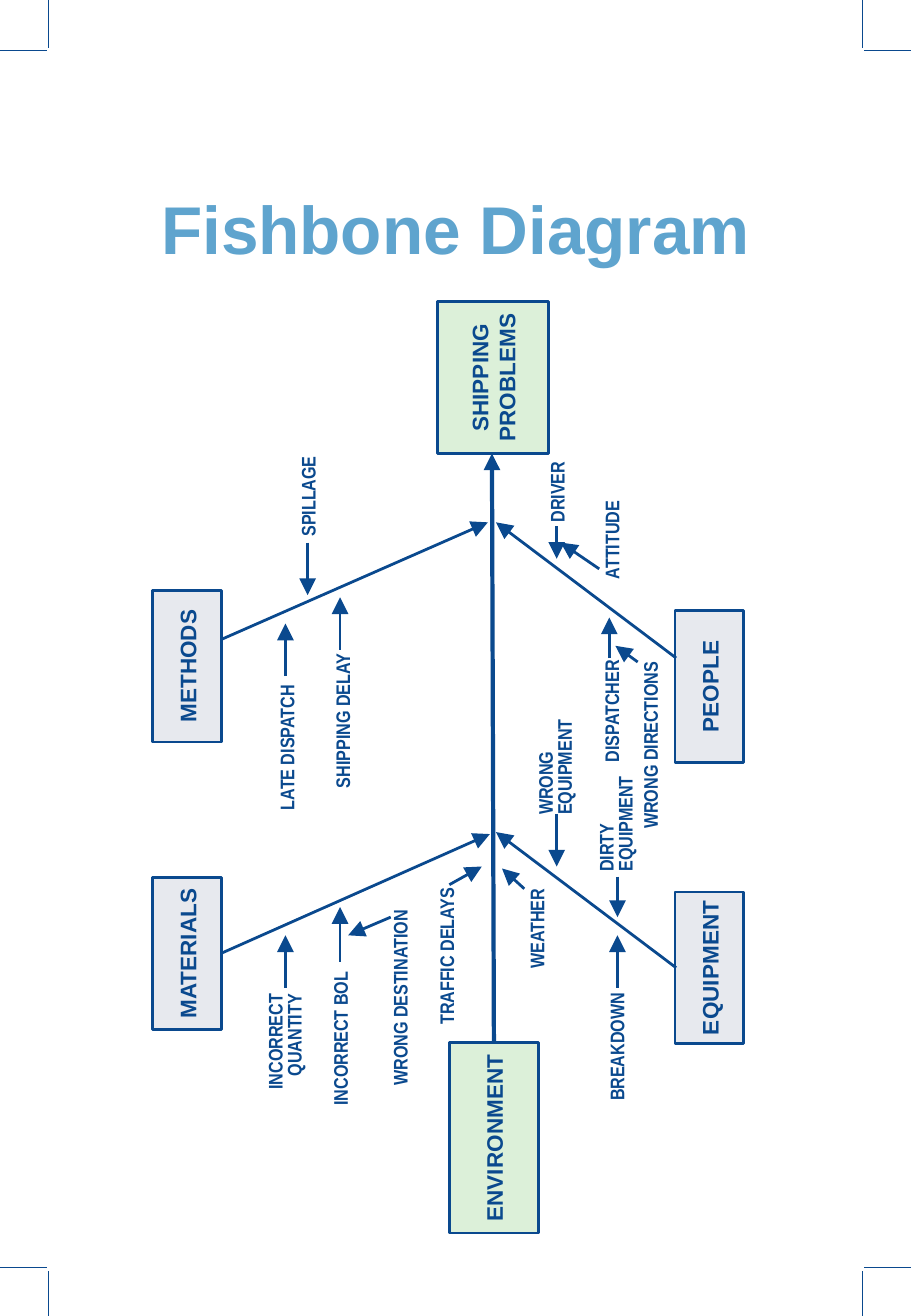
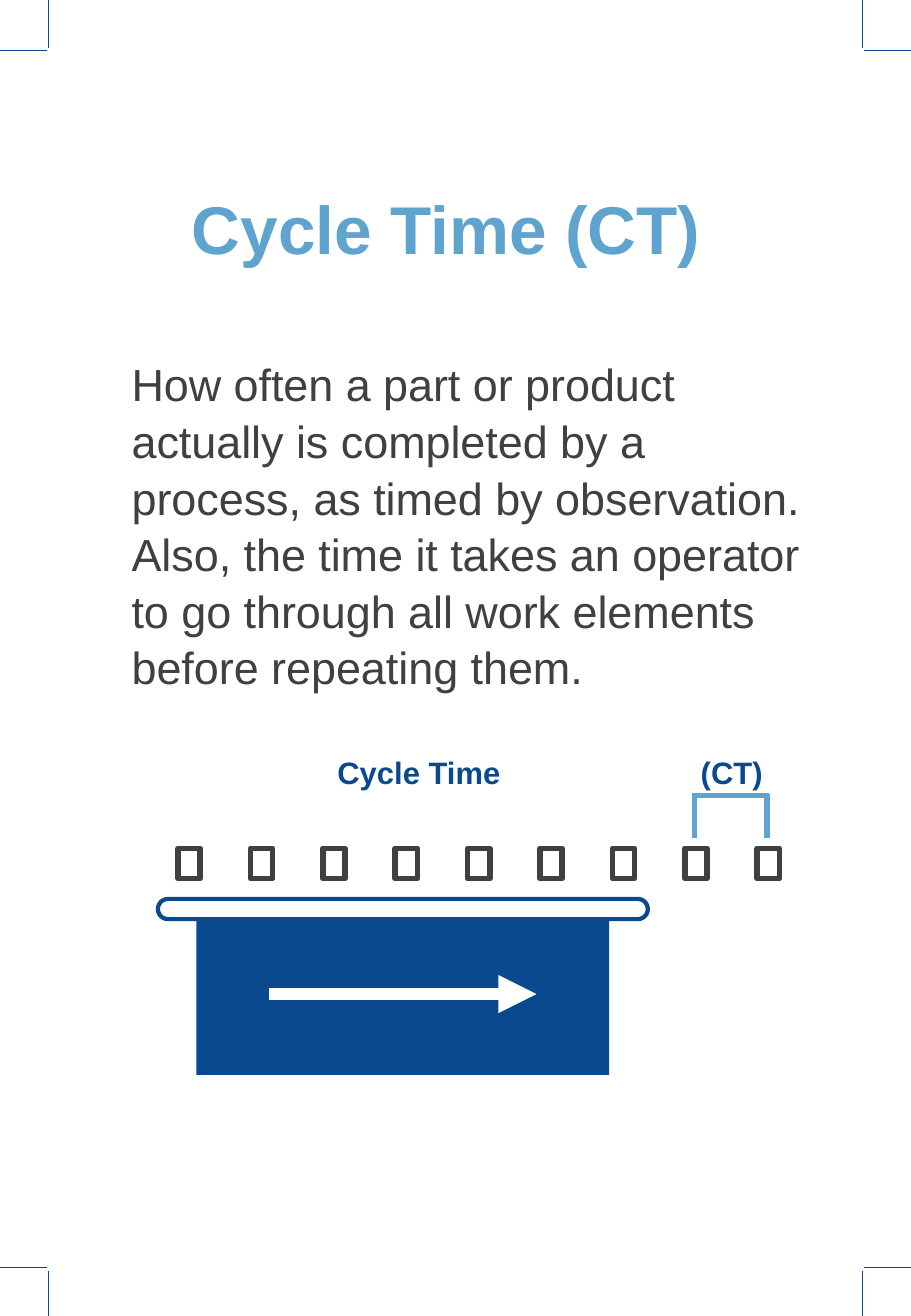
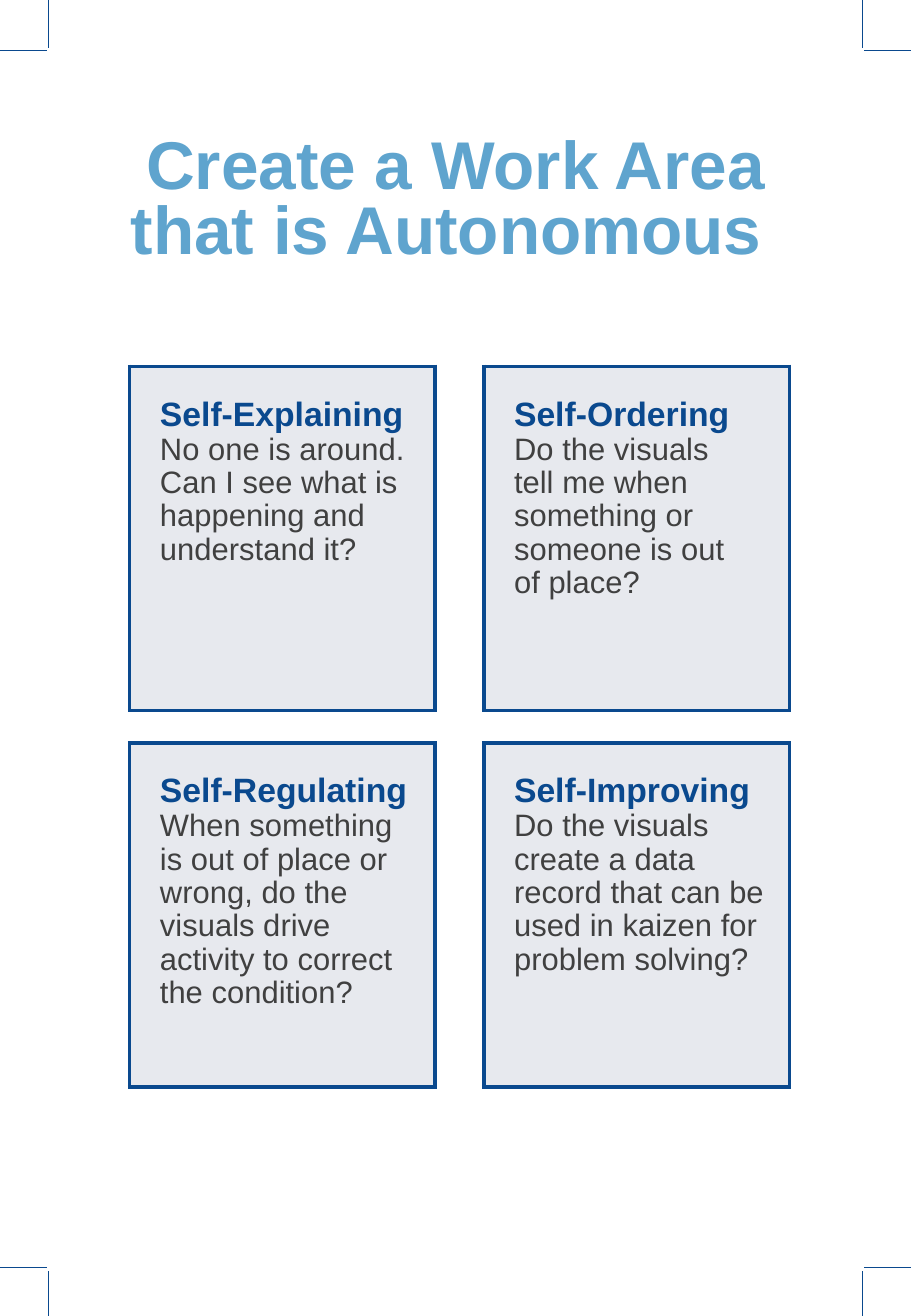
from copy import deepcopy
from dataclasses import dataclass

from lxml import etree
from pptx import Presentation
from pptx import util as u
from pptx.dml.color import RGBColor
from pptx.enum import shapes, text
from pptx.oxml import ns

COLS, ROWS = 45, 65
CELL = u.Inches(0.1)
LEFT, MID, RIGHT = text.PP_ALIGN.LEFT, text.PP_ALIGN.CENTER, text.PP_ALIGN.RIGHT
RECT, PILL = shapes.MSO_SHAPE.RECTANGLE, shapes.MSO_SHAPE.ROUNDED_RECTANGLE
PLAIN = "{2D5ABB26-0587-4C30-8999-92F81FD0307C}"


@dataclass(frozen=True)
class Theme:
    navy: str = "0A498E"
    sky: str = "5FA4CE"
    gray: str = "404040"
    pale: str = "E7E9EE"
    mint: str = "DCF0D9"
    white: str = "FFFFFF"
    face: str = "Arial"
    slim: str = "Arial Narrow"
    head: int = 24
    body: int = 16
    lead: int = 12
    note: int = 11
    bone: int = 8
    twig: int = 7


T = Theme()


def grid(*cells):
    return [u.Emu(round(n * CELL)) for n in cells]


def put(item, vals):
    for key, val in vals.items():
        setattr(item, key, val)


def rgb(hue):
    return RGBColor.from_string(hue)


def style(size, hue, bold=False, face=T.face):
    return {"size": u.Pt(size), "bold": bold, "name": face}, hue


def write(frame, parts, align=LEFT, pitch=1.0, pad=(0, 0, 0, 0),
          anchor=text.MSO_ANCHOR.TOP):
    put(frame, {
        "word_wrap": True,
        "auto_size": text.MSO_AUTO_SIZE.NONE,
        "vertical_anchor": anchor,
    })
    sides = ("margin_left", "margin_top", "margin_right", "margin_bottom")
    put(frame, dict(zip(sides, grid(*pad))))
    fill(frame, parts, align, pitch)


def fill(frame, parts, align, pitch):
    for i, (words, (font, hue)) in enumerate(parts):
        para = frame.add_paragraph() if i else frame.paragraphs[0]
        put(para, {"text": words, "alignment": align, "line_spacing": pitch})
        for run in para.runs:
            put(run.font, font)
            run.font.color.rgb = rgb(hue)
        for gap in para._p.findall(ns.qn("a:br")):
            gap.insert(0, deepcopy(para.runs[0]._r.rPr))


def title(slide, words, high=3.2):
    shape = slide.shapes.title
    left, top, width, height = grid(5, 13.2 - high, 35, high)
    put(shape, {"left": left, "top": top, "width": width, "height": height})
    write(shape.text_frame, [(words, style(T.head, T.sky, True))], MID, 0.8,
          anchor=text.MSO_ANCHOR.BOTTOM)


def label(slide, words, box, look, align=LEFT, pitch=1.0, turn=0,
          anchor=text.MSO_ANCHOR.TOP):
    shape = slide.shapes.add_textbox(*grid(*box))
    shape.rotation = turn
    write(shape.text_frame, [(words, look)], align, pitch, anchor=anchor)


def block(slide, box, hue, edge=None, width=1, kind=RECT):
    shape = slide.shapes.add_shape(kind, *grid(*box))
    shape.shadow.inherit = False
    shape.fill.solid()
    shape.fill.fore_color.rgb = rgb(hue)
    if edge:
        shape.line.color.rgb = rgb(edge)
        shape.line.width = u.Pt(width)
    else:
        shape.line.fill.background()
    return shape


def line(slide, ends, hue=T.navy, width=1, arrow=False):
    link = slide.shapes.add_connector(shapes.MSO_CONNECTOR.STRAIGHT, *grid(*ends))
    link.line.color.rgb = rgb(hue)
    link.line.width = u.Pt(width)
    if arrow:
        etree.SubElement(link.line._ln, ns.qn("a:tailEnd"), type="triangle")
    etree.SubElement(link.element.spPr, ns.qn("a:effectLst"))
    return link


def upright(x, y, long, deep):
    return x - long / 2, y - deep / 2, long, deep


def bone(slide, words, x, y, long=7.5, deep=3.4, hue=T.pale):
    shape = block(slide, upright(x, y, long, deep), hue, T.navy)
    shape.rotation = 270
    write(shape.text_frame, [(words, style(T.bone, T.navy, True))], MID,
          pad=(0.3,) * 4, anchor=text.MSO_ANCHOR.MIDDLE)


def twig(slide, words, x, y, long, align=RIGHT, deep=1.2):
    label(slide, words, upright(x, y, long, deep),
          style(T.twig, T.navy, True, T.slim), align,
          0.8 if deep > 1.2 else 1.0, 270, text.MSO_ANCHOR.MIDDLE)


def marks(slide, layout):
    links = []
    for edge, x, tip in ((0, 2.4, 2.3), (COLS, 42.6, 42.7)):
        for rim, y, end in ((0, 2.5, 2.35), (ROWS, 62.6, 62.8)):
            links.append(line(slide, (x, rim, x, end), width=0.5))
            links.append(line(slide, (edge, y, tip, y), width=0.5))
    for link in links:
        layout.shapes.element.append(link.element)


def fish(slide):
    title(slide, "Fishbone Diagram")
    for words, x, y in (
        ("MATERIALS", 9.25, 47.1),
        ("METHODS", 9.25, 32.9),
        ("EQUIPMENT", 35.05, 47.8),
        ("PEOPLE", 35.05, 33.9),
    ):
        bone(slide, words, x, y)
    bone(slide, "ENVIRONMENT", 24.4, 56.2, 9.4, 4.4, T.mint)
    bone(slide, "SHIPPING PROBLEMS", 24.35, 18.65, 7.5, 5.5, T.mint)
    for item in (
        ("SPILLAGE", 15.2, 23.9, 5.2, LEFT),
        ("LATE DISPATCH", 14.15, 37.9, 8.1),
        ("SHIPPING DELAY", 16.9, 36.7, 8.8),
        ("DRIVER", 27.5, 23.2, 5.2, LEFT),
        ("ATTITUDE", 30.2, 26, 5.2, LEFT),
        ("INCORRECT QUANTITY", 14.15, 53.15, 8.1, RIGHT, 1.9),
        ("INCORRECT BOL", 16.8, 52.7, 9.4),
        ("WRONG DESTINATION", 19.75, 50.8, 11.7),
        ("TRAFFIC DELAYS", 22.05, 49.7, 11.7),
        ("WEATHER", 26.5, 47, 6.2),
        ("BREAKDOWN", 30.45, 52, 5.9),
        ("WRONG EQUIPMENT", 27.5, 37.65, 5.2, LEFT, 1.9),
        ("DIRTY EQUIPMENT", 30.5, 40.45, 5.2, LEFT, 1.9),
        ("DISPATCHER", 30.2, 35.4, 5.6),
        ("WRONG DIRECTIONS", 32.1, 37.6, 9.8),
    ):
        twig(slide, *item)
    line(slide, (24.4, 51.5, 24.3, 22.4), width=1.5, arrow=True)
    for ends in (
        (10.9, 31.6, 24.1, 25.8),
        (10.9, 47.1, 24.2, 41.2),
        (33.4, 32.5, 24.5, 25.8),
        (33.4, 47.8, 24.5, 41.1),
        (14.1, 48.8, 14.1, 46.2),
        (16.8, 47.5, 16.8, 44.8),
        (30.5, 48.8, 30.5, 46.2),
        (14.1, 33.4, 14.1, 30.8),
        (16.8, 32.1, 16.8, 29.5),
        (15.2, 26.8, 15.2, 29.4),
        (30.1, 32.5, 30.1, 30.5),
        (27.5, 40.2, 27.5, 42.8),
        (30.5, 43.3, 30.5, 45.3),
        (31.5, 32.7, 30.4, 31.9),
        (29.6, 28.1, 27.7, 26.8),
        (27.5, 26, 27.5, 27.6),
        (25.9, 43.9, 24.8, 42.9),
        (22.2, 43.7, 23.8, 42.8),
        (19.3, 45.3, 17.2, 46.2),
    ):
        line(slide, ends, arrow=True)


def cycle(slide):
    title(slide, "Cycle Time (CT) ")
    label(slide, "How often a part or product\nactually is completed by a "
          "process, as timed by observation. Also, the time it takes an "
          "operator to go through all work elements before repeating them.",
          (6.5, 17.5, 33.5, 16.7), style(T.body, T.gray), pitch=1.05)
    block(slide, (9.7, 45, 20.4, 8.1), T.navy)
    belt = block(slide, (7.8, 44.4, 24.2, 1), T.white, T.navy, 1.5, PILL)
    belt.adjustments[0] = 0.5
    line(slide, (13.3, 49.1, 26.5, 49.1), T.white, 4.5, True)
    for i in range(9):
        block(slide, (8.8 + i * 3.575, 41.9, 1.1, 1.5), T.white, T.gray, 2)
    for ends in (
        (34.3, 41.4, 34.3, 39.2),
        (37.9, 41.4, 37.9, 39.2),
        (34.2, 39.3, 38, 39.3),
    ):
        line(slide, ends, T.sky, 2)
    for words, x, wide in (("Cycle Time", 16.2, 9), ("(CT)", 33.8, 4.7)):
        label(slide, words, (x, 37.2, wide, 1.9),
              style(T.note, T.navy, True), MID)


def frame(cell):
    props = cell._tc.get_or_add_tcPr()
    for i, side in enumerate(("lnL", "lnR", "lnT", "lnB")):
        edge = etree.Element(ns.qn("a:" + side), w=str(u.Pt(1.5)))
        paint = etree.SubElement(edge, ns.qn("a:solidFill"))
        etree.SubElement(paint, ns.qn("a:srgbClr"), val=T.navy)
        props.insert(i, edge)


def card(cell, head, words):
    put(cell, dict(zip(
        ("margin_left", "margin_top", "margin_right", "margin_bottom"),
        grid(1.5, 1.5, 0, 0))))
    fill(cell.text_frame, [(head, style(T.lead, T.navy, True))]
         + [(part, style(T.note, T.gray)) for part in words], LEFT, 0.97)
    cell.fill.solid()
    cell.fill.fore_color.rgb = rgb(T.pale)
    frame(cell)


def blank(cell):
    put(cell, {"margin_top": 0, "margin_bottom": 0})
    cell.fill.background()
    etree.SubElement(cell.text_frame.paragraphs[0]._p,
                     ns.qn("a:endParaRPr"), sz="600")


def area(slide):
    title(slide, "Create a Work Area that is Autonomous ", 12.9)
    table = slide.shapes.add_table(3, 3, *grid(6.4, 18.1, 32.5, 35.6)).table
    put(table, {"first_row": False, "horz_banding": False})
    table._tbl.tblPr.find(ns.qn("a:tableStyleId")).text = PLAIN
    for col, wide in zip(table.columns, grid(15.1, 2.3, 15.1)):
        col.width = wide
    for row, high in zip(table.rows, grid(17, 1.6, 17)):
        row.height = high
    cards = {
        (0, 0): ("Self-Explaining", (
            "No one is around.",
            "Can I see what is happening and understand it?")),
        (0, 2): ("Self-Ordering", (
            "Do the visuals\ntell me when something or\nsomeone is out\nof place?",)),
        (2, 0): ("Self-Regulating", (
            "When something\nis out of place or wrong, do the visuals drive\n"
            "activity to correct the condition?",)),
        (2, 2): ("Self-Improving", (
            "Do the visuals create a data record that can be used in kaizen "
            "for problem solving?",)),
    }
    for y in range(3):
        for x in range(3):
            cell = table.cell(y, x)
            if (y, x) in cards:
                card(cell, *cards[y, x])
            else:
                blank(cell)


def main():
    deck = Presentation()
    wide, high = grid(COLS, ROWS)
    put(deck, {"slide_width": wide, "slide_height": high})
    layout = deck.slide_layouts[5]
    for holder in list(layout.placeholders):
        if holder.placeholder_format.idx:
            layout.shapes.element.remove(holder.element)
    for i, draw in enumerate((fish, cycle, area)):
        slide = deck.slides.add_slide(layout)
        if i == 0:
            marks(slide, layout)
        draw(slide)
    deck.save("out.pptx")


if __name__ == "__main__":
    main()
